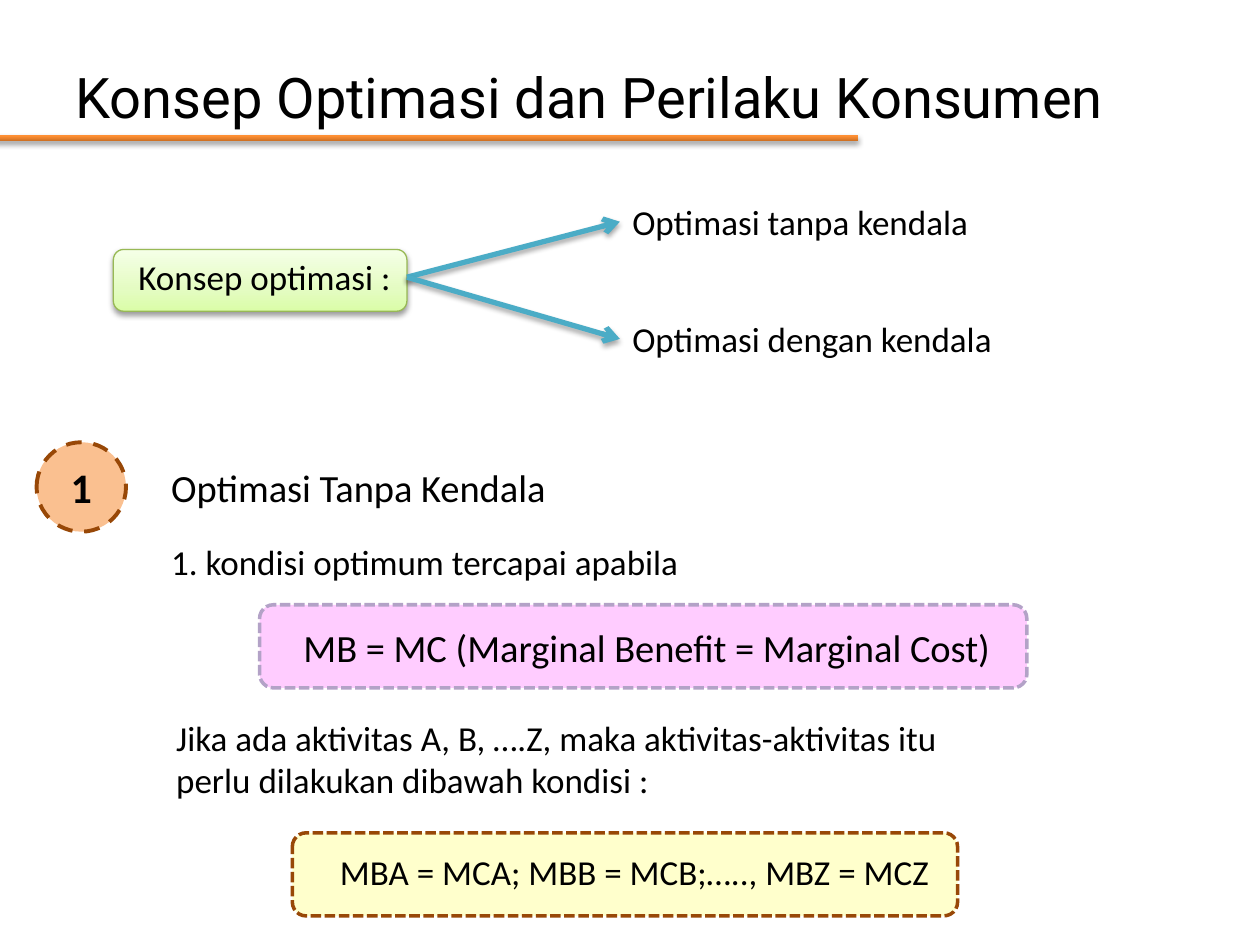
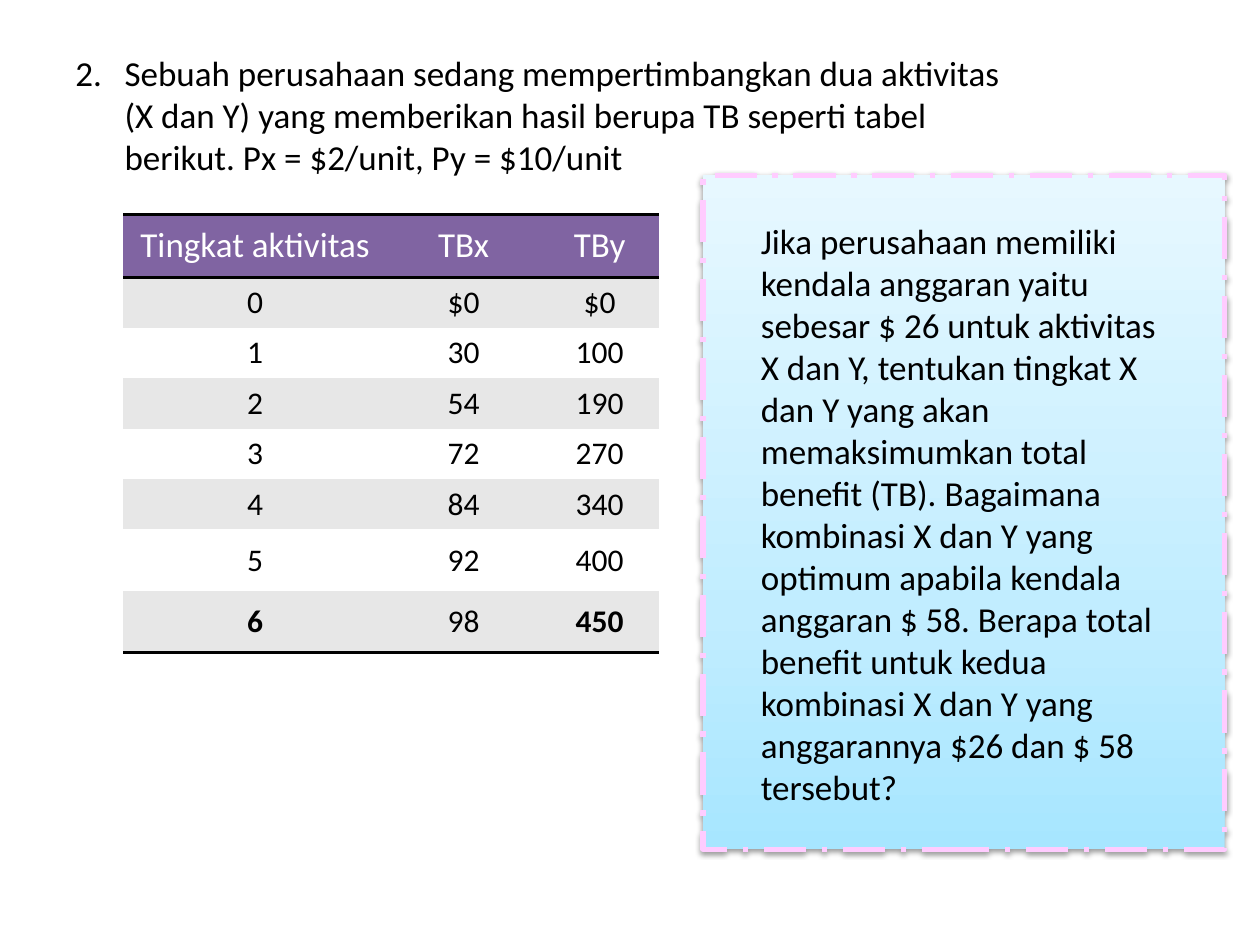
from dataclasses import dataclass
from typing import Any, Optional

from lxml import etree
from pptx import Presentation
from pptx import util as u
from pptx.dml.color import RGBColor
from pptx.enum import dml, shapes, text
from pptx.oxml import ns

PX = 9144
FONT = "Calibri"
TITLE_FONT = "Roboto"

BLACK = RGBColor(0x00, 0x00, 0x00)
WHITE = RGBColor(0xFF, 0xFF, 0xFF)
BROWN = RGBColor(0x98, 0x48, 0x07)
PEACH = RGBColor(0xFA, 0xC0, 0x90)
CREAM = RGBColor(0xFF, 0xFF, 0xCC)
PINK = RGBColor(0xFF, 0xCC, 0xFF)
LILAC = RGBColor(0xB3, 0xA2, 0xC7)
PURPLE = RGBColor(0x80, 0x64, 0xA2)
GREY = RGBColor(0xE7, 0xE7, 0xE7)
TEAL = RGBColor(0x4B, 0xAC, 0xC6)
GREEN = RGBColor(0x98, 0xB9, 0x55)

Stops = tuple[tuple[int, RGBColor], ...]
GREEN_FADE: Stops = ((0, RGBColor(0xDA, 0xFD, 0xA7)), (35, RGBColor(0xE4, 0xFC, 0xC2)),
                     (100, RGBColor(0xF5, 0xFF, 0xE7)))
BLUE_FADE: Stops = ((0, RGBColor(0xA7, 0xE6, 0xFF)), (35, RGBColor(0xC1, 0xED, 0xFF)),
                    (100, RGBColor(0xE7, 0xF8, 0xFF)))
ORANGE_FADE: Stops = ((0, RGBColor(0xCC, 0x6E, 0x20)), (80, RGBColor(0xFF, 0x90, 0x34)),
                      (100, RGBColor(0xFF, 0x91, 0x36)))

SHAPE = shapes.MSO_SHAPE
DASH = dml.MSO_LINE
NO_TABLE_STYLE = "{2D5ABB26-0587-4C30-8999-92F81FD0307C}"


@dataclass(frozen=True)
class Shadow:
    alpha: int
    dist: float


SOFT = Shadow(38, 1.6)
STRONG = Shadow(35, 1.8)


@dataclass(frozen=True)
class Panel:
    at: tuple[int, int, int, int]
    kind: Any
    fill: Any
    line: Optional[RGBColor] = None
    width: float = 2
    dash: Any = None
    shadow: Optional[Shadow] = None


@dataclass(frozen=True)
class Label:
    at: tuple[int, int, int, int]
    words: str
    size: int = 20
    wrap: bool = True
    font: str = FONT
    anchor: Any = text.MSO_ANCHOR.TOP
    hanging: int = 0


def set_all(obj: Any, values: dict[str, Any]) -> None:
    for name, value in values.items():
        setattr(obj, name, value)


def sub(parent: Any, tag: str, **attrs: Any) -> Any:
    return etree.SubElement(parent, ns.qn(tag), {k: str(v) for k, v in attrs.items()})


def add_effects(spPr: Any, shadow: Optional[Shadow]) -> None:
    effects = sub(spPr, "a:effectLst")
    if shadow:
        outer = sub(effects, "a:outerShdw", blurRad=u.Pt(3.1), dist=u.Pt(shadow.dist),
                    dir=5400000, rotWithShape=0)
        sub(sub(outer, "a:srgbClr", val=BLACK), "a:alpha", val=shadow.alpha * 1000)


def fill_gradient(sp: Any, stops: Stops) -> None:
    sp.fill.gradient()
    sp.fill.gradient_angle = 90
    gs_lst = sp._element.spPr.find(".//" + ns.qn("a:gsLst"))
    for gs in list(gs_lst):
        gs_lst.remove(gs)
    for pos, color in stops:
        sub(sub(gs_lst, "a:gs", pos=pos * 1000), "a:srgbClr", val=color)


def write(p: Any, words: str, size: int, color: RGBColor = BLACK,
          font: str = FONT, bold: bool = False) -> None:
    r = p.add_run()
    r.text = words
    set_all(r.font, {"size": u.Pt(size), "name": font, "bold": bold})
    r.font.color.rgb = color


def add_panel(s: Any, panel: Panel) -> Any:
    sp = s.shapes.add_shape(panel.kind, *(v * PX for v in panel.at))
    if isinstance(panel.fill, RGBColor):
        sp.fill.solid()
        sp.fill.fore_color.rgb = panel.fill
    else:
        fill_gradient(sp, panel.fill)
    if panel.line is None:
        sp.line.fill.background()
    else:
        sp.line.color.rgb = panel.line
        set_all(sp.line, {"width": u.Pt(panel.width), "dash_style": panel.dash})
    add_effects(sp._element.spPr, panel.shadow)
    return sp


def add_label(s: Any, label: Label) -> None:
    tf = s.shapes.add_textbox(*(v * PX for v in label.at)).text_frame
    set_all(tf, {"word_wrap": label.wrap, "vertical_anchor": label.anchor})
    p = tf.paragraphs[0]
    if label.hanging:
        pPr = p._p.get_or_add_pPr()
        pPr.set("marL", str(label.hanging * PX))
        pPr.set("indent", str(-label.hanging * PX))
    write(p, label.words, label.size, font=label.font)


def add_arrow(s: Any, start: tuple[int, int], end: tuple[int, int]) -> None:
    c = s.shapes.add_connector(shapes.MSO_CONNECTOR.STRAIGHT,
                               *(v * PX for v in start + end))
    c.line.color.rgb = TEAL
    c.line.width = u.Pt(3)
    spPr = c._element.spPr
    sub(spPr.find(ns.qn("a:ln")), "a:tailEnd", type="arrow")
    add_effects(spPr, STRONG)


def add_rule(cell: Any, side: str, index: int) -> None:
    tcPr = cell._tc.get_or_add_tcPr()
    ln = sub(tcPr, side, w=u.Pt(2))
    sub(sub(ln, "a:solidFill"), "a:srgbClr", val=BLACK)
    tcPr.insert(index, ln)


def add_benefit_table(s: Any) -> None:
    rows = (("Tingkat aktivitas", "TBx", "TBy"), ("0", "$0", "$0"), ("1", "30", "100"),
            ("2", "54", "190"), ("3", "72", "270"), ("4", "84", "340"),
            ("5", "92", "400"), ("6", "98", "450"))
    widths = (209, 122, 94)
    heights = (50, 40, 40, 40, 40, 40, 49, 49)
    bold_words = ("6", "450")
    frame = s.shapes.add_table(len(rows), len(widths), 98 * PX, 170 * PX,
                               sum(widths) * PX, sum(heights) * PX)
    table = frame.table
    set_all(table, {"first_row": False, "horz_banding": False})
    table._tbl.tblPr.find(ns.qn("a:tableStyleId")).text = NO_TABLE_STYLE
    for column, width in zip(table.columns, widths):
        column.width = width * PX
    for i, (row, height) in enumerate(zip(rows, heights)):
        table.rows[i].height = height * PX
        header = i == 0
        for j, words in enumerate(row):
            cell = table.cell(i, j)
            cell.vertical_anchor = text.MSO_ANCHOR.MIDDLE
            cell.fill.solid()
            cell.fill.fore_color.rgb = PURPLE if header else GREY if i % 2 else WHITE
            if header:
                add_rule(cell, "a:lnT", 0)
            if header or i == len(rows) - 1:
                add_rule(cell, "a:lnB", int(header))
            p = cell.text_frame.paragraphs[0]
            p.alignment = text.PP_ALIGN.CENTER
            write(p, words, 20 if header else 18, WHITE if header else BLACK,
                  bold=words in bold_words)


def build_concept(s: Any) -> None:
    panels = (
        Panel((232, 661, 528, 66), SHAPE.ROUNDED_RECTANGLE, CREAM, BROWN, 2, DASH.SQUARE_DOT),
        Panel((206, 480, 609, 66), SHAPE.ROUNDED_RECTANGLE, PINK, LILAC, 2, DASH.SQUARE_DOT),
        Panel((90, 198, 233, 49), SHAPE.ROUNDED_RECTANGLE, GREEN_FADE, GREEN, 0.75, shadow=SOFT),
    )
    labels = (
        Label((50, 30, 900, 93), "Konsep Optimasi dan Perilaku Konsumen", 32,
              font=TITLE_FONT, anchor=text.MSO_ANCHOR.MIDDLE),
        Label((100, 198, 222, 44), "Konsep optimasi :", wrap=False),
        Label((492, 154, 290, 44), "Optimasi tanpa kendala", wrap=False),
        Label((492, 247, 346, 44), "Optimasi dengan kendala"),
        Label((126, 363, 329, 47), "Optimasi Tanpa Kendala", 22, wrap=False),
        Label((126, 424, 477, 44), "1. kondisi optimum tercapai apabila"),
        Label((231, 490, 571, 47), "MB = MC (Marginal Benefit = Marginal Cost)", 22, wrap=False),
        Label((130, 564, 673, 77), "Jika ada aktivitas A, B, ….Z, maka aktivitas-aktivitas itu "
              "perlu dilakukan dibawah kondisi :"),
        Label((260, 670, 543, 44), "MBA = MCA; MBB = MCB;….., MBZ = MCZ"),
    )
    for panel in panels:
        add_panel(s, panel)
    for label in labels:
        add_label(s, label)
    badge = add_panel(s, Panel((29, 351, 71, 71), SHAPE.OVAL, PEACH, BROWN, 2.25, DASH.DASH))
    tf = badge.text_frame
    tf.vertical_anchor = text.MSO_ANCHOR.MIDDLE
    p = tf.paragraphs[0]
    p.alignment = text.PP_ALIGN.CENTER
    write(p, "1", 24, bold=True)
    add_panel(s, Panel((-8, 107, 689, 5), SHAPE.ROUNDED_RECTANGLE, ORANGE_FADE, shadow=STRONG))
    for end_y in (176, 269):
        add_arrow(s, (323, 220), (492, end_y))


def build_exercise(s: Any) -> None:
    add_panel(s, Panel((558, 139, 414, 535), SHAPE.RECTANGLE, BLUE_FADE, PINK, 3,
                       DASH.LONG_DASH_DOT, SOFT))
    add_label(s, Label((50, 36, 773, 127), "2.\tSebuah perusahaan sedang mempertimbangkan dua "
                       "aktivitas (X dan Y) yang memberikan hasil berupa TB seperti tabel "
                       "berikut. Px = $2/unit, Py = $10/unit", hanging=39))
    add_benefit_table(s)
    add_label(s, Label((594, 169, 346, 481), "Jika perusahaan memiliki kendala anggaran yaitu "
                       "sebesar $ 26 untuk aktivitas X dan Y, tentukan tingkat X dan Y yang akan "
                       "memaksimumkan total benefit (TB). Bagaimana kombinasi X dan Y yang optimum "
                       "apabila kendala anggaran $ 58. Berapa total benefit untuk kedua kombinasi "
                       "X dan Y yang anggarannya $26 dan $ 58 tersebut?"))


def main() -> None:
    prs = Presentation()
    set_all(prs, {"slide_width": 1000 * PX, "slide_height": 750 * PX})
    for build in (build_concept, build_exercise):
        build(prs.slides.add_slide(prs.slide_layouts[6]))
    prs.save("out.pptx")


if __name__ == "__main__":
    main()
